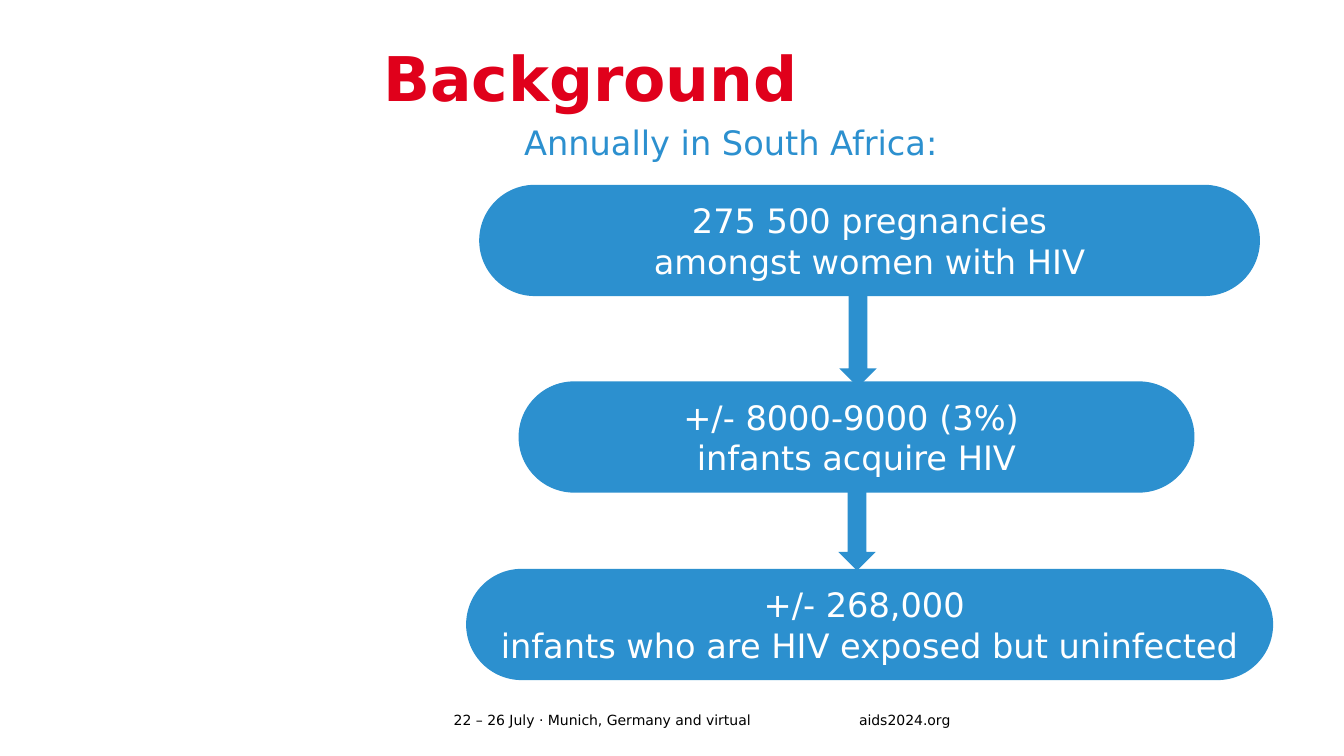
import pptx
import pptx.util
import pptx.dml.color
import pptx.enum.shapes
import pptx.enum.text
from dataclasses import dataclass

SHAPE = pptx.enum.shapes.MSO_SHAPE
ANCHOR = pptx.enum.text.MSO_ANCHOR
ALIGN = pptx.enum.text.PP_ALIGN
inch = pptx.util.Inches


@dataclass(frozen=True)
class Theme:
    font: str = "DejaVu Sans"
    red: str = "E0001B"
    blue: str = "2C90CF"
    white: str = "FFFFFF"
    black: str = "000000"
    title: int = 44
    body: int = 24
    footer: int = 10


theme = Theme()
WIDTH, HEIGHT = 13.33, 7.5
PILL_H = 1.09
ARROW_LENGTH, ARROW_WIDTH = 0.92, 0.37
FOOTER_TOP, FOOTER_H = 7.02, 0.24

TITLE = "Background"
LEAD = "Annually in South Africa:"
STEPS = [
    (4.76, 1.84, 7.73, ["275 500 pregnancies", "amongst women with HIV"]),
    (5.15, 3.79, 6.69, ["+/- 8000-9000 (3%) ", "infants acquire HIV"]),
    (4.63, 5.65, 7.99, ["+/- 268,000 ", "infants who are HIV exposed but uninfected"]),
]
ARROW_CENTERS = [(8.51, 3.38), (8.5, 5.2)]
FOOTERS = [
    (4.5, 4.02, "22 – 26 July · Munich, Germany and virtual"),
    (8.52, 1.93, "aids2024.org"),
]


def rgb(color):
    return pptx.dml.color.RGBColor.from_string(color)


def write(sp, lines, size, color, bold=False, align=ALIGN.LEFT, anchor=ANCHOR.TOP, inset=True, spacing=None):
    tf = sp.text_frame
    tf.word_wrap = True
    tf.vertical_anchor = anchor
    if not inset:
        tf.margin_left = tf.margin_top = tf.margin_right = tf.margin_bottom = 0
    for i, line in enumerate(lines):
        p = tf.add_paragraph() if i else tf.paragraphs[0]
        p.alignment = align
        if spacing:
            p.line_spacing = spacing
        r = p.add_run()
        r.text = line
        r.font.name = theme.font
        r.font.size = pptx.util.Pt(size)
        r.font.bold = bold
        r.font.color.rgb = rgb(color)


def textbox(s, box, text, size, color, **options):
    sp = s.shapes.add_textbox(*map(inch, box))
    write(sp, [text], size, color, **options)


def blue_shape(s, kind, box):
    sp = s.shapes.add_shape(kind, *map(inch, box))
    sp.shadow.inherit = False
    sp.fill.solid()
    sp.fill.fore_color.rgb = rgb(theme.blue)
    sp.line.fill.background()
    return sp


def main():
    prs = pptx.Presentation()
    prs.slide_width, prs.slide_height = inch(WIDTH), inch(HEIGHT)
    s = prs.slides.add_slide(prs.slide_layouts[6])

    for left, width, text in FOOTERS:
        textbox(s, (left, FOOTER_TOP, width, FOOTER_H), text, theme.footer, theme.black,
                anchor=ANCHOR.MIDDLE, inset=False)
    textbox(s, (3.8, 0.48, 9.05, 0.71), TITLE, theme.title, theme.red,
            bold=True, inset=False, spacing=0.9)

    for left, top, width, lines in STEPS:
        sp = blue_shape(s, SHAPE.ROUNDED_RECTANGLE, (left, top, width, PILL_H))
        sp.adjustments[0] = 0.5
        sp.line.color.rgb = rgb(theme.blue)
        sp.line.width = pptx.util.Pt(1)
        write(sp, lines, theme.body, theme.white, align=ALIGN.CENTER, anchor=ANCHOR.MIDDLE)

    textbox(s, (5.1, 1.16, 6.67, 0.5), LEAD, theme.body, theme.blue)

    for x, y in ARROW_CENTERS:
        box = (x - ARROW_LENGTH / 2, y - ARROW_WIDTH / 2, ARROW_LENGTH, ARROW_WIDTH)
        blue_shape(s, SHAPE.RIGHT_ARROW, box).rotation = 90

    prs.save("out.pptx")


if __name__ == "__main__":
    main()
